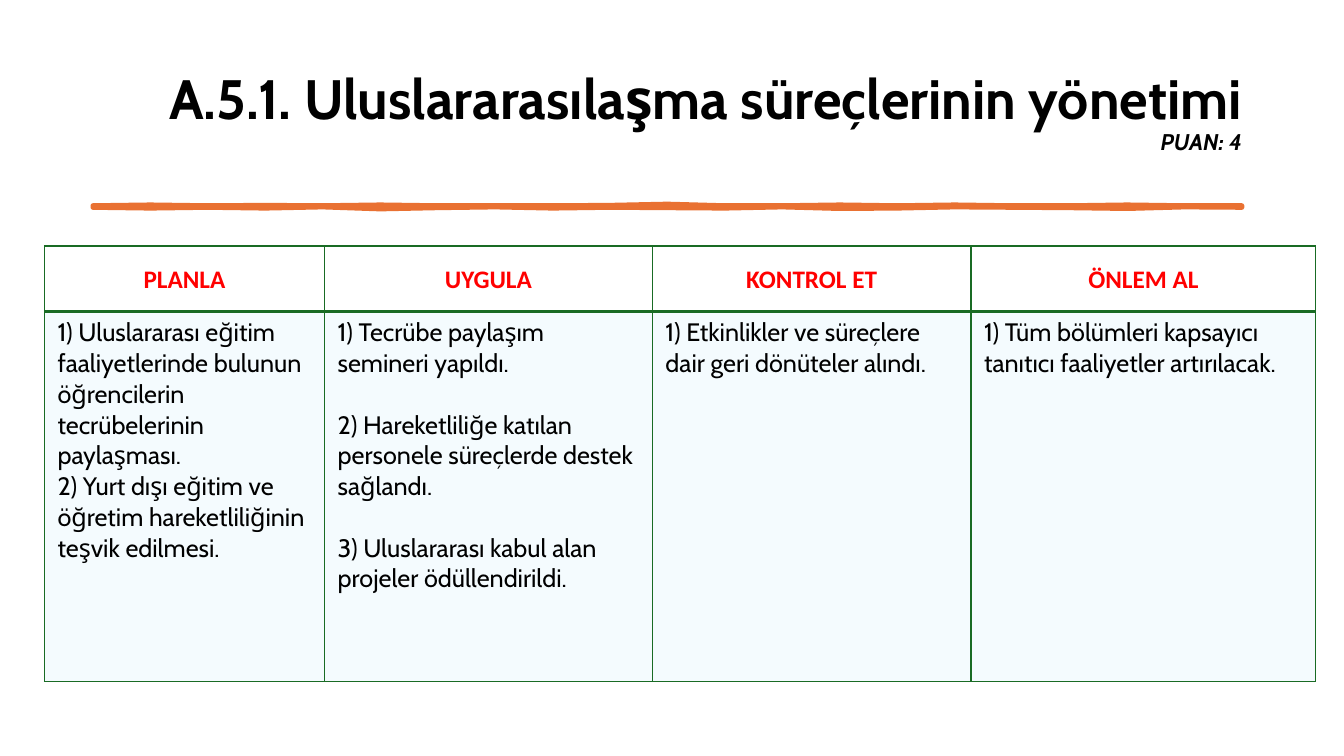
"""Builds the slide on managing internationalisation as a plan-do-check-act table."""
from dataclasses import dataclass

from lxml import etree
from pptx import Presentation
from pptx import util as u
from pptx.dml.color import RGBColor
from pptx.enum import text
from pptx.oxml import ns


@dataclass(frozen=True)
class Theme:
    black: str = "000000"
    header: str = "FF0000"
    accent: str = "E97132"
    border: str = "196B24"
    body_fill: str = "CAEEFB"
    body_alpha: int = 20
    font: str = "Cabin"
    header_font: str = "Calibri"
    title_size: float = 39.6
    score_size: float = 16.2
    table_size: float = 18
    item_gap: float = 22


THEME = Theme()
TITLE = "A.5.1. Uluslararasılaşma süreçlerinin yönetimi"
SCORE = "PUAN: 4"
COLUMNS = [
    ("PLANLA", 7.06, 0, [
        "1) Uluslararası eğitim faaliyetlerinde bulunun öğrencilerin tecrübelerinin paylaşması.",
        "2) Yurt dışı eğitim ve öğretim hareketliliğinin teşvik edilmesi."]),
    ("UYGULA", 8.26, THEME.item_gap, [
        "1) Tecrübe paylaşım semineri yapıldı.",
        "2) Hareketliliğe katılan personele süreçlerde destek sağlandı.",
        "3) Uluslararası kabul alan projeler ödüllendirildi."]),
    ("KONTROL ET", 8.03, 0, ["1) Etkinlikler ve süreçlere dair geri dönüteler alındı."]),
    ("ÖNLEM AL", 8.69, 0, ["1) Tüm bölümleri kapsayıcı tanıtıcı faaliyetler artırılacak."]),
]
ROW_HEIGHTS = (1.65, 9.32)
STROKE_TOP = (5.18, 5.16, 5.18, 5.17, 5.18, 5.16, 5.18, 5.18, 5.18, 5.17, 5.14,
              5.18, 5.18, 5.16, 5.18, 5.16, 5.18, 5.18, 5.16, 5.18, 5.18)
STROKE_BOTTOM = (5.23, 5.25, 5.23, 5.25, 5.22, 5.27, 5.24, 5.22, 5.25, 5.23, 5.24,
                 5.25, 5.22, 5.26, 5.25, 5.22, 5.23, 5.24, 5.26, 5.22, 5.23)


def style_font(font, name, size, color, bold=False):
    """Set typeface, size, colour and weight."""
    font.name, font.size, font.bold = name, u.Pt(size), bold
    font.color.rgb = RGBColor.from_string(color)


def add_title(s):
    """Add the right-aligned title with the score under it."""
    box = s.shapes.add_textbox(u.Cm(2.34), u.Cm(1.02), u.Cm(29.21), u.Cm(3.68))
    tf = box.text_frame
    tf.word_wrap = True
    tf.vertical_anchor = text.MSO_ANCHOR.MIDDLE
    p = tf.paragraphs[0]
    p.alignment = text.PP_ALIGN.RIGHT
    p.line_spacing = 0.9
    style_font(p.font, THEME.font, THEME.title_size, THEME.black, True)
    p.add_run().text = TITLE
    p.add_line_break()
    r = p.add_run()
    r.text = SCORE
    r.font.size, r.font.italic = u.Pt(THEME.score_size), True


def add_brush_stroke(s, left=2.34, width=28.96):
    """Add the uneven hand-drawn rule below the title."""
    step = width / (len(STROKE_TOP) - 1)
    top = [(u.Cm(left + i * step), u.Cm(y)) for i, y in enumerate(STROKE_TOP)]
    bottom = [(u.Cm(left + i * step), u.Cm(y)) for i, y in enumerate(STROKE_BOTTOM)]
    builder = s.shapes.build_freeform(*top[0])
    builder.add_line_segments(top[1:] + bottom[::-1], close=True)
    sp = builder.convert_to_shape()
    sp.shadow.inherit = False
    sp.fill.solid()
    sp.fill.fore_color.rgb = RGBColor.from_string(THEME.accent)
    sp.line.color.rgb = RGBColor.from_string(THEME.accent)
    sp.line.width = u.Pt(3.25)


def set_borders(cell, bottom=1):
    """Draw the four cell borders, with a chosen bottom width in points."""
    tc_pr = cell._tc.get_or_add_tcPr()
    for side, width in (("L", 1), ("R", 1), ("T", 1), ("B", bottom)):
        ln = etree.SubElement(tc_pr, ns.qn(f"a:ln{side}"), w=str(u.Pt(width)))
        fill = etree.SubElement(ln, ns.qn("a:solidFill"))
        etree.SubElement(fill, ns.qn("a:srgbClr"), val=THEME.border)


def set_margins(cell, horizontal, vertical):
    """Set the cell insets in centimetres."""
    cell.margin_left = cell.margin_right = u.Cm(horizontal)
    cell.margin_top = cell.margin_bottom = u.Cm(vertical)


def fill_header(cell, label):
    """Write a centred column heading."""
    set_borders(cell, bottom=2)
    set_margins(cell, 0.13, 0)
    cell.fill.background()
    cell.vertical_anchor = text.MSO_ANCHOR.MIDDLE
    p = cell.text_frame.paragraphs[0]
    p.text = label
    p.alignment = text.PP_ALIGN.CENTER
    p.line_spacing, p.space_after = 1.07, u.Pt(8)
    style_font(p.font, THEME.header_font, THEME.table_size, THEME.header, True)


def fill_body(cell, items, gap):
    """Write the items of a column on a pale tint."""
    set_borders(cell)
    set_margins(cell, 0.33, 0.15)
    cell.fill.solid()
    cell.fill.fore_color.rgb = RGBColor.from_string(THEME.body_fill)
    color = cell._tc.tcPr.find(f"{ns.qn('a:solidFill')}/{ns.qn('a:srgbClr')}")
    etree.SubElement(color, ns.qn("a:alpha"), val=str(THEME.body_alpha * 1000))
    tf = cell.text_frame
    for i, item in enumerate(items):
        p = tf.add_paragraph() if i else tf.paragraphs[0]
        p.text = item
        p.space_before = u.Pt(gap if i else 0)
        style_font(p.font, THEME.font, THEME.table_size, THEME.black)


def add_cycle_table(s):
    """Add the four-column table of the improvement cycle."""
    width = sum(column[1] for column in COLUMNS)
    frame = s.shapes.add_table(len(ROW_HEIGHTS), len(COLUMNS), u.Cm(1.12), u.Cm(6.2),
                               u.Cm(width), u.Cm(sum(ROW_HEIGHTS)))
    table = frame.table
    table.first_row = table.horz_banding = False
    for row, height in zip(table.rows, ROW_HEIGHTS):
        row.height = u.Cm(height)
    for i, (label, column_width, gap, items) in enumerate(COLUMNS):
        table.columns[i].width = u.Cm(column_width)
        fill_header(table.cell(0, i), label)
        fill_body(table.cell(1, i), items, gap)


def main():
    """Build and save the slide."""
    prs = Presentation()
    prs.slide_width, prs.slide_height = u.Cm(33.87), u.Cm(19.05)
    s = prs.slides.add_slide(prs.slide_layouts[6])
    add_title(s)
    add_brush_stroke(s)
    add_cycle_table(s)
    prs.save("out.pptx")


if __name__ == "__main__":
    main()
